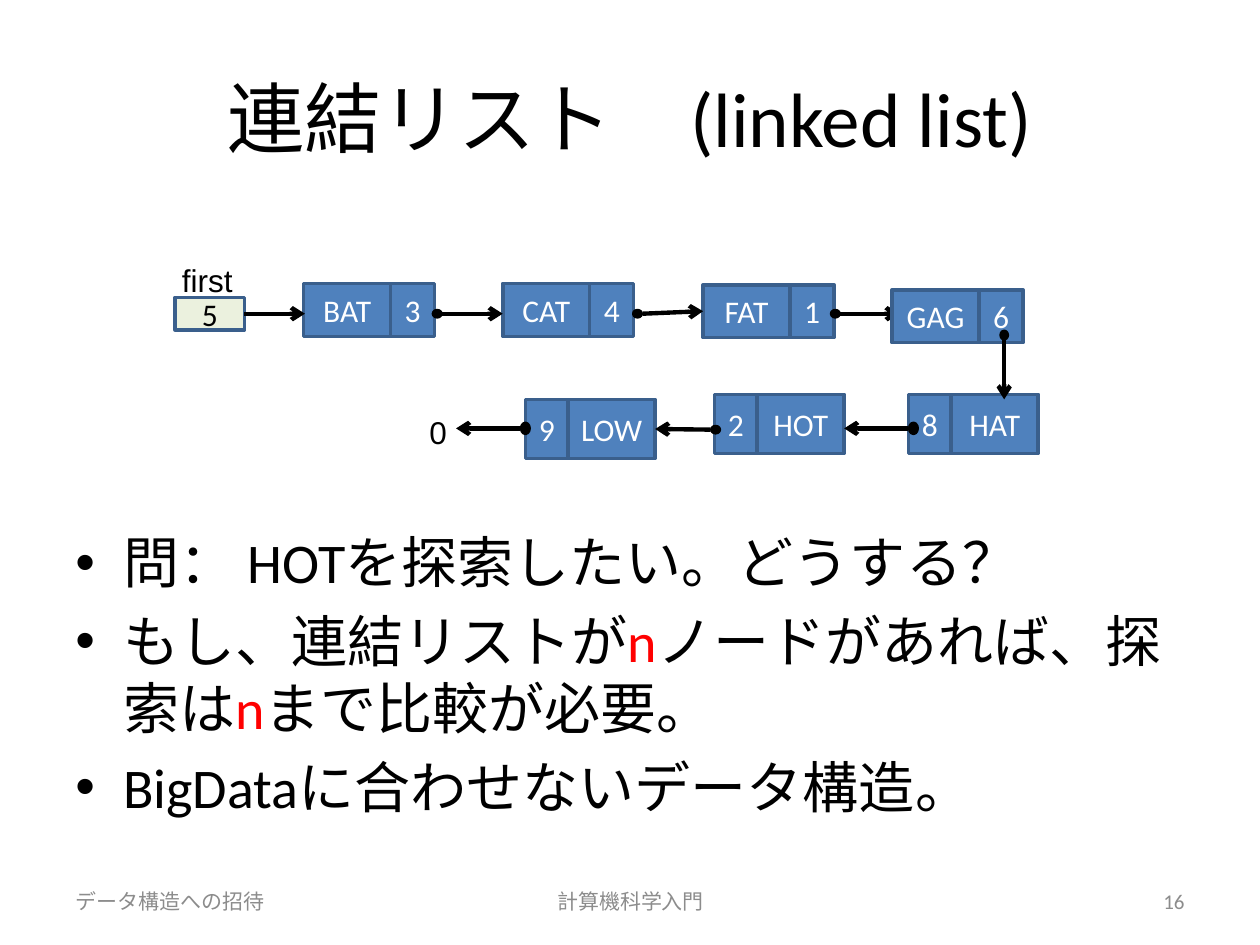
from dataclasses import dataclass

from pptx import Presentation
from pptx.dml.color import RGBColor
from pptx.enum.shapes import MSO_CONNECTOR, MSO_SHAPE
from pptx.enum.text import MSO_ANCHOR, PP_ALIGN
from pptx.oxml.ns import qn
from pptx.util import Inches, Pt
from lxml.etree import SubElement


@dataclass(frozen=True)
class Theme:
    black: str = "000000"
    white: str = "FFFFFF"
    red: str = "FF0000"
    gray: str = "8C8C8C"
    node: str = "4F81BD"
    pointer: str = "EBF1DE"
    border: str = "3A5F8C"
    font: str = "Calibri"
    label_font: str = "Arial"
    title: int = 44
    body: int = 32
    cell: int = 18
    footer: int = 12


class ListSlide:
    def __init__(self, prs, theme):
        self.t = theme
        self.s = prs.slides.add_slide(prs.slide_layouts[6])

    def style(self, r, size, color, font=None):
        r.font.size = Pt(size)
        r.font.name = font or self.t.font
        r.font.color.rgb = RGBColor.from_string(color)

    def text(self, box, text, size, color, align=PP_ALIGN.LEFT,
             anchor=MSO_ANCHOR.MIDDLE, font=None):
        sp = self.s.shapes.add_textbox(*map(Inches, box))
        tf = sp.text_frame
        tf.word_wrap = True
        tf.vertical_anchor = anchor
        tf.text = text
        p = tf.paragraphs[0]
        p.alignment = align
        self.style(p.runs[0], size, color, font)

    def bullets(self, box, items, top):
        """Write bulleted items; "|" separates runs and a lone "n" turns red."""
        tf = self.s.shapes.add_textbox(*map(Inches, box)).text_frame
        tf.word_wrap = True
        tf.margin_top = Inches(top)
        for i, item in enumerate(items):
            p = tf.add_paragraph() if i else tf.paragraphs[0]
            p.space_before = Pt(0.2 * self.t.body)
            pPr = p._p.get_or_add_pPr()
            pPr.set("marL", str(Inches(0.38)))
            pPr.set("indent", str(Inches(-0.38)))
            SubElement(pPr, qn("a:buFont"), typeface="Arial")
            SubElement(pPr, qn("a:buChar"), char="•")
            for piece in item.split("|"):
                r = p.add_run()
                r.text = piece
                self.style(r, self.t.body, self.t.red if piece == "n" else self.t.black)

    def shape(self, kind, box, fill, line):
        sp = self.s.shapes.add_shape(kind, *map(Inches, box))
        sp.shadow.inherit = False
        sp.fill.solid()
        sp.fill.fore_color.rgb = RGBColor.from_string(fill)
        sp.line.color.rgb = RGBColor.from_string(line)
        sp.line.width = Pt(2)
        return sp

    def cell(self, box, text, fill, color):
        sp = self.shape(MSO_SHAPE.RECTANGLE, box, fill, self.t.border)
        tf = sp.text_frame
        tf.margin_left = tf.margin_right = tf.margin_top = tf.margin_bottom = 0
        tf.vertical_anchor = MSO_ANCHOR.MIDDLE
        tf.text = text
        p = tf.paragraphs[0]
        p.alignment = PP_ALIGN.CENTER
        self.style(p.runs[0], self.t.cell, color)
        return sp

    def node(self, x, y, word, index, index_first=False):
        """Draw a word cell and an index cell side by side; return the word cell."""
        word_w, index_w, h = (0.69, 0.34, 0.47) if index_first else (0.69, 0.35, 0.42)
        word_x, index_x = (x + index_w, x) if index_first else (x, x + word_w)
        sp = self.cell((word_x, y, word_w, h), word, self.t.node, self.t.white)
        self.cell((index_x, y, index_w, h), index, self.t.node, self.t.white)
        return sp

    def arrow(self, start, end):
        c = self.s.shapes.add_connector(MSO_CONNECTOR.STRAIGHT, *map(Inches, start + end))
        c.line.color.rgb = RGBColor.from_string(self.t.black)
        c.line.width = Pt(2.5)
        SubElement(c.line._get_or_add_ln(), qn("a:tailEnd"), type="arrow")
        SubElement(c._element.spPr, qn("a:effectLst"))
        return c

    def link(self, x, y, end, dot=(0.06, 0.05)):
        """Draw a dot centred at (x, y) and an arrow from its edge to end."""
        w, h = dot
        self.shape(MSO_SHAPE.OVAL, (x - w / 2, y - h / 2, w, h), self.t.black, self.t.black)
        step = [0.04 * ((b > a) - (b < a)) for a, b in zip((x, y), end)]
        return self.arrow((x + step[0], y + step[1]), end)


def main():
    prs = Presentation()
    prs.slide_width, prs.slide_height = Inches(10), Inches(7.5)
    t = Theme()
    s = ListSlide(prs, t)

    s.text((0.5, 0.3, 9, 1.25), "連結リスト　(linked list)", t.title, t.black, PP_ALIGN.CENTER)
    s.bullets((0.5, 1.62, 9, 5.35), [
        "問： HOTを探索したい。どうする？",
        "もし、連結リストが|n|ノードがあれば、探索は|n|まで比較が必要。",
        "BigDataに合わせないデータ構造。",
    ], top=2.57)

    # Upper row, left to right
    s.node(2.41, 2.25, "BAT", "3")
    s.node(3.99, 2.25, "CAT", "4")
    fat = s.node(5.58, 2.26, "FAT", "1")
    first = s.cell((1.39, 2.36, 0.55, 0.26), "5", t.pointer, t.black)
    s.text((1.31, 2.02, 0.67, 0.34), "first", t.cell, t.black,
           PP_ALIGN.CENTER, MSO_ANCHOR.TOP, t.label_font)
    s.arrow((1.94, 2.49), (2.42, 2.49)).begin_connect(first, 3)
    s.text((3.31, 3.23, 0.44, 0.4), "0", t.cell, t.black,
           anchor=MSO_ANCHOR.TOP, font=t.label_font)
    s.link(3.47, 2.49, (3.99, 2.49))
    s.link(5.06, 2.49, (5.58, 2.49)).end_connect(fat, 1)
    s.link(6.63, 2.49, (7.14, 2.49))
    s.node(7.08, 2.3, "GAG", "6")

    # Lower row, right to left
    s.node(7.21, 3.13, "HAT", "8", index_first=True)
    s.link(7.97, 2.66, (7.97, 3.17), dot=(0.05, 0.06))
    s.node(5.67, 3.13, "HOT", "2", index_first=True)
    low = s.node(4.17, 3.17, "LOW", "9", index_first=True)
    s.link(5.68, 3.41, (5.21, 3.41)).end_connect(low, 3)
    for x, end_x in ((7.25, 6.7), (4.17, 3.62)):
        s.link(x, 3.4, (end_x, 3.4), dot=(0.06, 0.08))

    for x, w, text, align in (
        (0.5, 2.33, "データ構造への招待", PP_ALIGN.LEFT),
        (3.42, 3.17, "計算機科学入門", PP_ALIGN.CENTER),
        (7.17, 2.33, "16", PP_ALIGN.RIGHT),
    ):
        s.text((x, 6.95, w, 0.4), text, t.footer, t.gray, align)

    prs.save("out.pptx")


if __name__ == "__main__":
    main()
